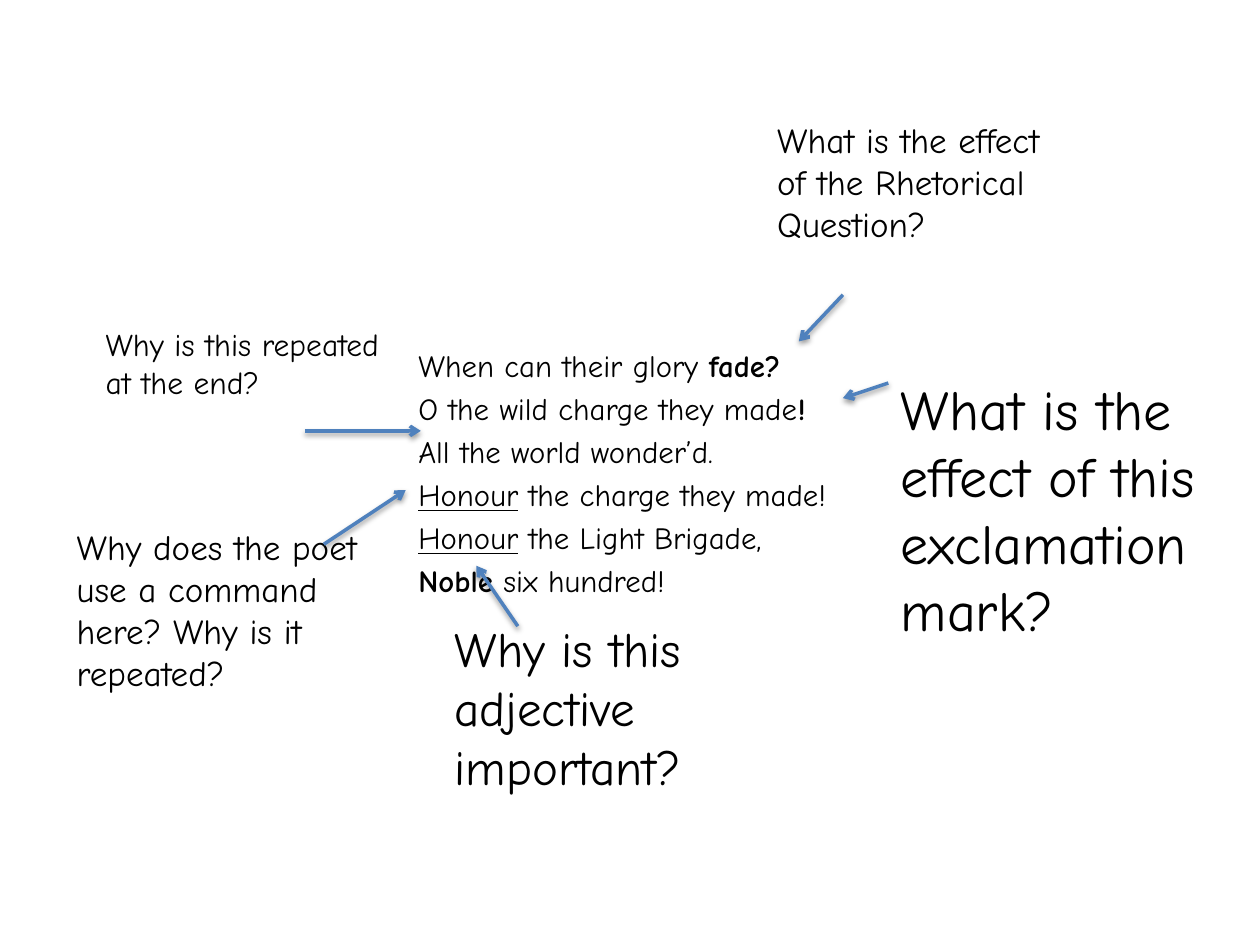
import pptx
import pptx.dml.color
import pptx.enum.shapes
import pptx.enum.text
import pptx.oxml
import pptx.oxml.ns
import pptx.util
from pptx.util import Inches

BLACK = pptx.dml.color.RGBColor(0x00, 0x00, 0x00)
BLUE = pptx.dml.color.RGBColor(0x4F, 0x81, 0xBD)
FONT = "Comic Neue"
BOLD = {"bold": True}
UNDERLINE = {"underline": True}

POEM = [
    [("When can their glory ", {}), ("fade?", BOLD)],
    [("O the wild charge they made", {}), ("!", BOLD)],
    [("All the world wonder’d.", {})],
    [("Honour", UNDERLINE), (" the charge they made!", {})],
    [("Honour", UNDERLINE), (" the Light Brigade,", {})],
    [("Noble", BOLD), (" six hundred!", {})],
]

QUESTIONS = [
    ("What is the effect of the Rhetorical Question?", 6.07, 0.89, 1.45, 20),
    ("What is the effect of this exclamation mark?", 7.05, 2.92, 2.79, 32),
    ("Why is this repeated at the end?", 0.74, 2.53, 1.01, 18),
    ("Why does the poet use a command here? Why is it repeated?", 0.51, 4.12, 1.78, 20),
    ("Why is this adjective important?", 3.51, 4.86, 1.51, 28),
]
QUESTION_WIDTH = 2.55

ARROWS = [
    (6.69, 2.34, 6.34, 2.71),
    (7.05, 3.04, 6.69, 3.16),
    (2.42, 3.42, 3.34, 3.42),
    (2.57, 4.32, 3.22, 3.89),
    (4.11, 4.97, 3.78, 4.49),
]

SHADOW = (
    f'<a:effectLst {pptx.oxml.ns.nsdecls("a")}>'
    '<a:outerShdw blurRad="39370" dist="20320" dir="5400000" rotWithShape="0">'
    '<a:srgbClr val="000000"><a:alpha val="38000"/></a:srgbClr>'
    '</a:outerShdw></a:effectLst>'
)
ARROWHEAD = f'<a:tailEnd {pptx.oxml.ns.nsdecls("a")} type="arrow"/>'
NO_BULLET = f'<a:buNone {pptx.oxml.ns.nsdecls("a")}/>'


def add_run(paragraph, text, size, emphasis):
    run = paragraph.add_run()
    run.text = text
    values = {"name": FONT, "size": pptx.util.Pt(size), **emphasis}
    for name, value in values.items():
        setattr(run.font, name, value)
    run.font.color.rgb = BLACK


def fill_poem(shape):
    position = {"left": 3.22, "top": 2.7, "width": 3.83, "height": 2.38}
    for name, value in position.items():
        setattr(shape, name, Inches(value))
    frame = shape.text_frame
    frame.auto_size = pptx.enum.text.MSO_AUTO_SIZE.NONE
    for index, line in enumerate(POEM):
        paragraph = frame.add_paragraph() if index else frame.paragraphs[0]
        paragraph.space_before = pptx.util.Pt(3.5)
        properties = paragraph._p.get_or_add_pPr()
        properties.set("marL", "0")
        properties.set("indent", "0")
        properties.append(pptx.oxml.parse_xml(NO_BULLET))
        for text, emphasis in line:
            add_run(paragraph, text, 17.6, emphasis)


def add_question(slide, text, left, top, height, size):
    box = slide.shapes.add_textbox(
        Inches(left), Inches(top), Inches(QUESTION_WIDTH), Inches(height)
    )
    frame = box.text_frame
    frame.word_wrap = True
    frame.auto_size = pptx.enum.text.MSO_AUTO_SIZE.SHAPE_TO_FIT_TEXT
    add_run(frame.paragraphs[0], text, size, {})


def add_arrow(slide, *ends):
    arrow = slide.shapes.add_connector(
        pptx.enum.shapes.MSO_CONNECTOR.STRAIGHT, *map(Inches, ends)
    )
    arrow.line.color.rgb = BLUE
    arrow.line.width = pptx.util.Pt(2)
    arrow.line._get_or_add_ln().append(pptx.oxml.parse_xml(ARROWHEAD))
    arrow._element.spPr.append(pptx.oxml.parse_xml(SHADOW))


def main():
    presentation = pptx.Presentation()
    presentation.slide_width = Inches(10)
    presentation.slide_height = Inches(7.5)
    slide = presentation.slides.add_slide(presentation.slide_layouts[1])
    title = slide.shapes.title._element
    title.getparent().remove(title)
    fill_poem(slide.placeholders[1])
    for question in QUESTIONS:
        add_question(slide, *question)
    for ends in ARROWS:
        add_arrow(slide, *ends)
    presentation.save("out.pptx")


if __name__ == "__main__":
    main()
